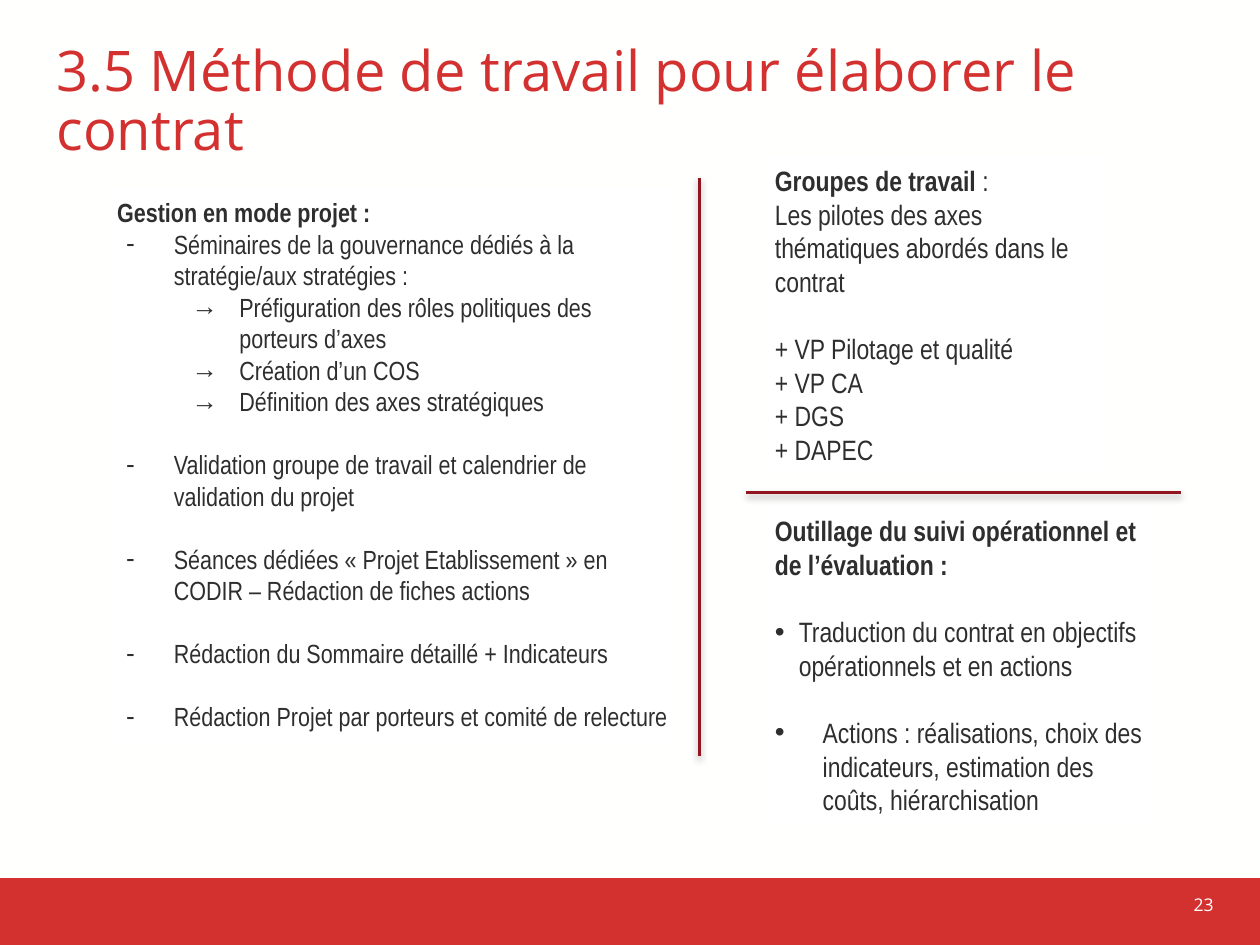
from dataclasses import dataclass

from lxml import etree
from pptx import Presentation
from pptx.dml.color import RGBColor
from pptx.enum.shapes import MSO_CONNECTOR, MSO_SHAPE
from pptx.enum.text import MSO_ANCHOR, PP_ALIGN
from pptx.oxml.ns import qn
from pptx.util import Inches, Pt

RECT = MSO_SHAPE.RECTANGLE
STRAIGHT = MSO_CONNECTOR.STRAIGHT
TOP = MSO_ANCHOR.TOP
LEFT, RIGHT = PP_ALIGN.LEFT, PP_ALIGN.RIGHT


@dataclass(frozen=True)
class Theme:
    paper: str = "FFFFFE"
    panel: str = "FFFFFF"
    red: str = "D33030"
    rule: str = "92161F"
    ink: str = "2D2E2D"
    shadow: str = "000000"
    heading_font: str = "Open Sans"
    body_font: str = "Arial Narrow"
    title_size: int = 32
    group_size: int = 16
    project_size: int = 15
    number_size: int = 10
    line_height: float = 1.2


THEME = Theme()


@dataclass(frozen=True)
class Para:
    text: str
    bold: bool = False
    tail: str = ""
    bullet: str = ""
    left: float = 0
    hang: float = 0
    gap: bool = False


def dash(text, gap=True):
    return Para(text, bullet="-", left=0.45, hang=0.38, gap=gap)


def arrow(text):
    return Para(text, bullet="→", left=0.97, hang=0.38)


def dot(text, indent):
    return Para(text, bullet="•", left=indent, hang=indent, gap=True)


PROJECT = [
    Para("Gestion en mode projet :", bold=True),
    dash("Séminaires de la gouvernance dédiés à la stratégie/aux stratégies :", gap=False),
    arrow("Préfiguration des rôles politiques des porteurs d’axes"),
    arrow("Création d’un COS"),
    arrow("Définition des axes stratégiques"),
    dash("Validation groupe de travail et calendrier de validation du projet"),
    dash("Séances dédiées « Projet Etablissement » en CODIR – Rédaction de fiches actions"),
    dash("Rédaction du Sommaire détaillé + Indicateurs"),
    dash("Rédaction Projet par porteurs et comité de relecture"),
]
GROUPS = [
    Para("Groupes de travail ", bold=True, tail=":"),
    Para("Les pilotes des axes thématiques abordés dans le contrat"),
    Para("+ VP Pilotage et qualité", gap=True),
    Para("+ VP CA"),
    Para("+ DGS"),
    Para("+ DAPEC"),
]
TOOLS = [
    Para("Outillage du suivi opérationnel et de l’évaluation :", bold=True),
    dot("Traduction du contrat en objectifs opérationnels et en actions", 0.19),
    dot("Actions : réalisations, choix des indicateurs, estimation des coûts, hiérarchisation", 0.38),
]


def rgb(value):
    return RGBColor.from_string(value)


def add_run(p, text, font, size, color, bold=False):
    r = p.add_run()
    r.text = text
    r.font.name = font
    r.font.size = Pt(size)
    r.font.color.rgb = rgb(color)
    r.font.bold = bold


def add_rect(s, box, fill, line=None):
    sp = s.shapes.add_shape(RECT, *map(Inches, box))
    sp.shadow.inherit = False
    sp.fill.solid()
    sp.fill.fore_color.rgb = rgb(fill)
    if line:
        sp.line.color.rgb = rgb(line)
        sp.line.width = Pt(2)
    else:
        sp.line.fill.background()
    return sp


def add_label(s, box, text, size, color, align=LEFT, top=0.05, spacing=1.0):
    tf = s.shapes.add_textbox(*map(Inches, box)).text_frame
    tf.word_wrap = True
    tf.vertical_anchor = TOP
    tf.margin_top = Inches(top)
    p = tf.paragraphs[0]
    p.alignment = align
    p.line_spacing = spacing
    add_run(p, text, THEME.heading_font, size, color)


def set_bullet(p, para):
    pPr = p._p.get_or_add_pPr()
    pPr.set("marL", str(Inches(para.left)))
    pPr.set("indent", str(-Inches(para.hang)))
    etree.SubElement(pPr, qn("a:buFont"), typeface="Arial")
    etree.SubElement(pPr, qn("a:buChar"), char=para.bullet)


def add_panel(s, box, paras, size):
    tf = add_rect(s, box, THEME.panel, THEME.panel).text_frame
    tf.word_wrap = True
    tf.vertical_anchor = TOP
    tf.margin_left = tf.margin_right = tf.margin_top = tf.margin_bottom = Inches(0.05)
    for i, para in enumerate(paras):
        p = tf.add_paragraph() if i else tf.paragraphs[0]
        if para.bullet:
            set_bullet(p, para)
        p.alignment = LEFT
        if para.gap:
            p.space_before = Pt(size * THEME.line_height)
        add_run(p, para.text, THEME.body_font, size, THEME.ink, para.bold)
        if para.tail:
            add_run(p, para.tail, THEME.body_font, size, THEME.ink)


def add_rule(s, x1, y1, x2, y2):
    ln = s.shapes.add_connector(STRAIGHT, *map(Inches, (x1, y1, x2, y2)))
    ln.line.color.rgb = rgb(THEME.rule)
    ln.line.width = Pt(1.75)
    effects = etree.SubElement(ln._element.spPr, qn("a:effectLst"))
    shadow = etree.SubElement(effects, qn("a:outerShdw"), blurRad=str(Pt(4)),
                              dist=str(Pt(2)), dir="5400000", rotWithShape="0")
    color = etree.SubElement(shadow, qn("a:srgbClr"), val=THEME.shadow)
    etree.SubElement(color, qn("a:alpha"), val="28000")


def main():
    prs = Presentation()
    prs.slide_width, prs.slide_height = Inches(10), Inches(7.5)
    s = prs.slides.add_slide(prs.slide_layouts[6])
    s.background.fill.solid()
    s.background.fill.fore_color.rgb = rgb(THEME.paper)

    add_rect(s, (-0.12, 6.97, 10.24, 0.56), THEME.red)
    add_label(s, (0.35, 0.25, 9.36, 0.86), "3.5 Méthode de travail pour élaborer le contrat",
              THEME.title_size, THEME.red, top=0.1, spacing=0.88)
    add_label(s, (8.39, 7.05, 1.34, 0.4), "23", THEME.number_size, THEME.paper, RIGHT)
    add_rule(s, 5.92, 3.91, 9.37, 3.91)
    add_panel(s, (6.1, 4.03, 3.07, 2.52), TOOLS, THEME.group_size)
    add_panel(s, (6.1, 1.25, 2.68, 2.52), GROUPS, THEME.group_size)
    add_panel(s, (0.88, 1.51, 4.49, 4.39), PROJECT, THEME.project_size)
    add_rule(s, 5.55, 1.41, 5.55, 6)
    prs.save("out.pptx")


if __name__ == "__main__":
    main()
